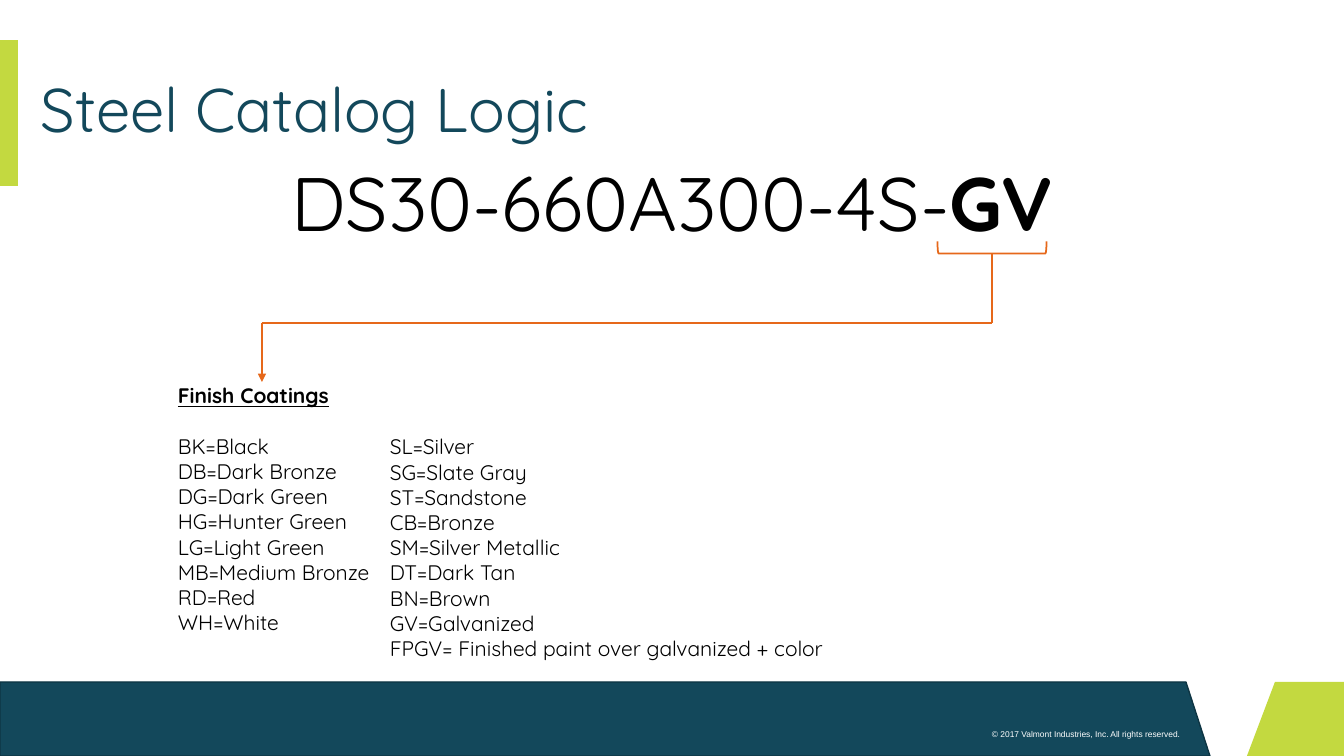
from lxml.etree import SubElement
from pptx import Presentation
from pptx.dml.color import RGBColor
from pptx.enum.shapes import MSO_CONNECTOR, MSO_SHAPE
from pptx.enum.text import MSO_ANCHOR, PP_ALIGN
from pptx.oxml.ns import qn
from pptx.util import Emu, Pt

PX = 914400 / 100.8
NAVY, LIME, ORANGE = "13485B", "C3D940", "E6681A"
BLACK, WHITE = "000000", "FFFFFF"
FONT = "Quicksand"

LEFT_COATINGS = [
    "BK=Black", "DB=Dark Bronze", "DG=Dark Green", "HG=Hunter Green",
    "LG=Light Green", "MB=Medium Bronze", "RD=Red", "WH=White",
]
RIGHT_COATINGS = [
    "SL=Silver", "SG=Slate Gray", "ST=Sandstone", "CB=Bronze",
    "SM=Silver Metallic", "DT=Dark Tan", "BN=Brown", "GV=Galvanized",
    "FPGV= Finished paint over galvanized + color",
]


def px(length):
    return Emu(round(length * PX))


def color(value):
    return RGBColor.from_string(value)


def paint(shape, fill, line=None, width=1):
    shape.shadow.inherit = False
    if fill:
        shape.fill.solid()
        shape.fill.fore_color.rgb = color(fill)
    else:
        shape.fill.background()
    if line:
        shape.line.color.rgb = color(line)
        shape.line.width = Pt(width)
    else:
        shape.line.fill.background()


def add_preset(page, kind, left, top, width, height, fill, line=None, weight=1):
    shape = page.shapes.add_shape(kind, px(left), px(top), px(width), px(height))
    paint(shape, fill, line, weight)
    return shape


def add_outline(page, points, fill, line=None):
    builder = page.shapes.build_freeform(*points[0], scale=PX)
    builder.add_line_segments(points[1:], close=True)
    paint(builder.convert_to_shape(), fill, line)


def add_box(page, left, top, width, height):
    box = page.shapes.add_textbox(px(left), px(top), px(width), px(height))
    box.text_frame.word_wrap = True
    return box.text_frame


def add_span(para, text, size, ink=BLACK, font=FONT, bold=False, underline=False):
    span = para.add_run()
    span.text = text
    span.font.name = font
    span.font.size = Pt(size)
    span.font.color.rgb = color(ink)
    span.font.bold = bold
    span.font.underline = underline


def add_list(frame, lines, first):
    """Write one paragraph per line, starting in the given paragraph."""
    for number, line in enumerate(lines):
        para = frame.add_paragraph() if number else first
        add_span(para, line, 15)


def add_line(page, start, end, arrow=False):
    line = page.shapes.add_connector(
        MSO_CONNECTOR.STRAIGHT, *map(px, start), *map(px, end))
    line.line.color.rgb = color(ORANGE)
    line.line.width = Pt(1.25)
    if arrow:
        SubElement(line.line._get_or_add_ln(), qn("a:tailEnd"), type="triangle")
    SubElement(line._element.spPr, qn("a:effectLst"))


def add_frame(page):
    add_outline(page, [(0, 682), (1186, 682), (1210, 756), (0, 756)], NAVY, "0E3543")
    add_outline(page, [(1275, 682), (1344, 682), (1344, 756), (1247, 756)], LIME)
    add_preset(page, MSO_SHAPE.RECTANGLE, 0, 40, 18, 146, LIME)
    para = add_box(page, 938, 724, 252, 20).paragraphs[0]
    para.alignment = PP_ALIGN.RIGHT
    add_span(para, "© 2017 Valmont Industries, Inc. All rights reserved.",
             6, WHITE, "Arial")


def add_headings(page):
    title = add_box(page, 31, 40, 1313, 146)
    title.vertical_anchor = MSO_ANCHOR.MIDDLE
    title.paragraphs[0].line_spacing = 0.9
    add_span(title.paragraphs[0], "Steel Catalog Logic", 44, NAVY)

    number = add_box(page, 274, 151, 796, 102).paragraphs[0]
    number.alignment = PP_ALIGN.CENTER
    add_span(number, "DS30-660A300-4S-", 54)
    add_span(number, "GV", 54, bold=True)


def add_coatings(page):
    left = add_box(page, 168, 378, 219, 272)
    add_span(left.paragraphs[0], "Finish Coatings", 15, bold=True, underline=True)
    first = left.add_paragraph()
    first.space_before = Pt(18)
    add_list(left, LEFT_COATINGS, first)

    right = add_box(page, 380, 429, 532, 239)
    add_list(right, RIGHT_COATINGS, right.paragraphs[0])


def add_callout(page):
    bracket = add_preset(page, MSO_SHAPE.RIGHT_BRACKET, 986, 193, 12, 109,
                         None, ORANGE, 1.25)
    bracket.rotation = 90
    stem, corner, turn, tip = (992, 253), (992, 323), (262, 323), (262, 382)
    add_line(page, stem, corner)
    add_line(page, turn, corner)
    add_line(page, turn, tip, arrow=True)


def main():
    deck = Presentation()
    deck.slide_width, deck.slide_height = px(1344), px(756)
    page = deck.slides.add_slide(deck.slide_layouts[6])

    # Bands and copyright line
    add_frame(page)
    # Title and catalog number
    add_headings(page)
    # Two columns of finish codes
    add_coatings(page)
    # Bracket and arrow from the suffix to the list
    add_callout(page)

    deck.save("out.pptx")


if __name__ == "__main__":
    main()
